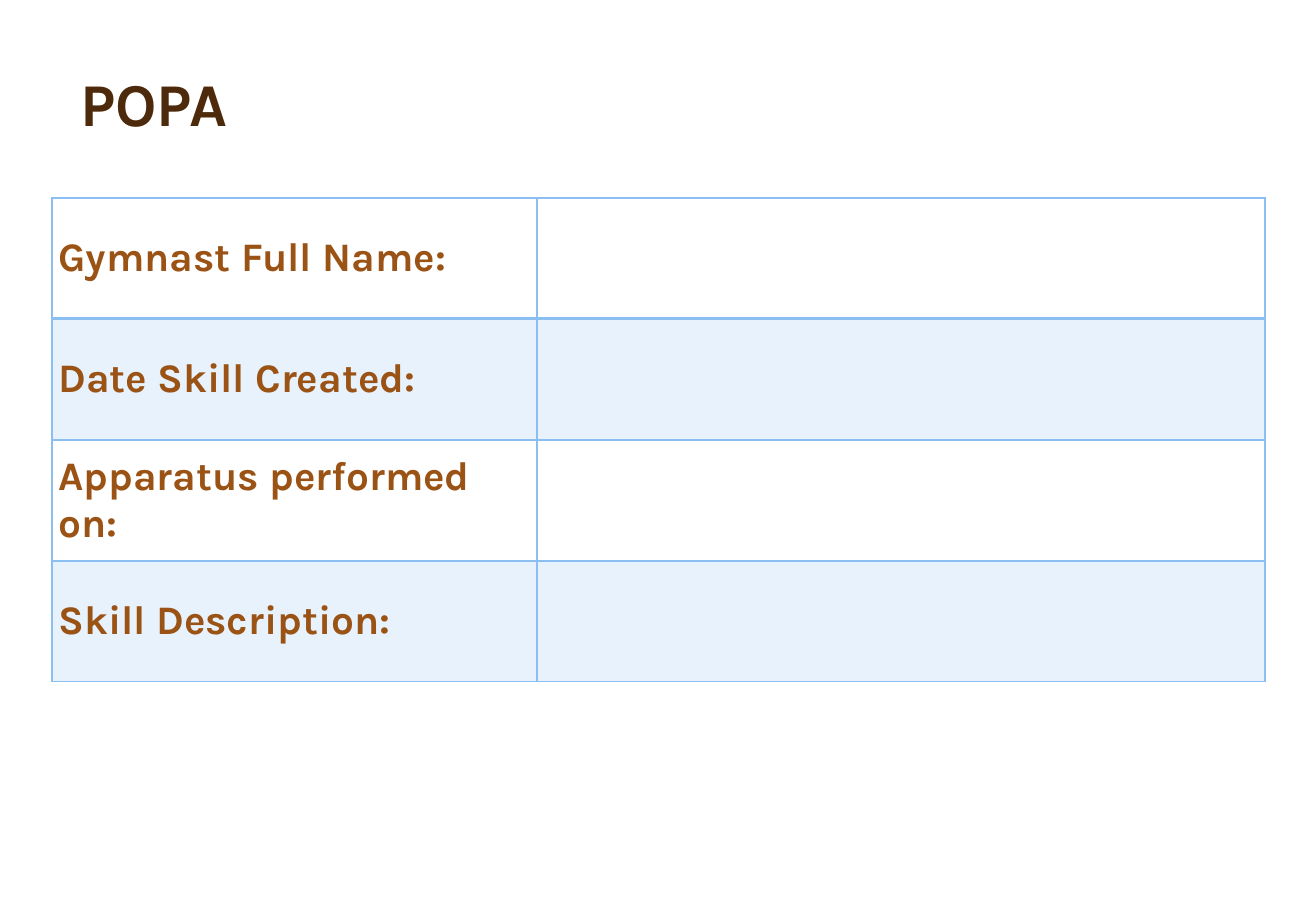
import pptx
import pptx.dml.color
import pptx.enum.text
import pptx.oxml
import pptx.oxml.ns
import pptx.util

Cm, Pt = pptx.util.Cm, pptx.util.Pt
ANCHOR = pptx.enum.text.MSO_ANCHOR
FONT = "Karla"
BLUE = "8BBEF1"
LABELS = ["Gymnast Full Name:", "Date Skill Created:",
          "Apparatus performed on:", "Skill Description:"]


def rgb(color):
    """Return the colour for a hex string."""
    return pptx.dml.color.RGBColor.from_string(color)


def style(p, size, color):
    """Set the bold font of a paragraph."""
    p.font.name = FONT
    p.font.size = Pt(size)
    p.font.bold = True
    p.font.color.rgb = rgb(color)


def add_title(s, text, left, top, width, height):
    """Place and format the slide title."""
    sp = s.shapes.title
    sp.left, sp.top, sp.width, sp.height = left, top, width, height
    tf = sp.text_frame
    tf.text = text
    tf.word_wrap = True
    tf.vertical_anchor = ANCHOR.BOTTOM
    p = tf.paragraphs[0]
    p.alignment = pptx.enum.text.PP_ALIGN.LEFT
    p.line_spacing = 0.9
    style(p, 36, "4D2A0B")


def set_borders(cell, widths):
    """Draw the left, right, top and bottom borders of a cell."""
    tcPr = cell._tc.get_or_add_tcPr()
    for side, width in zip("LRTB", widths):
        tcPr.append(pptx.oxml.parse_xml(
            f'<a:ln{side} {pptx.oxml.ns.nsdecls("a")} w="{Pt(width)}">'
            f'<a:solidFill><a:srgbClr val="{BLUE}"/></a:solidFill></a:ln{side}>'))


def set_fill(cell, shaded):
    """Give a cell a light tint or no fill."""
    if not shaded:
        cell.fill.background()
        return
    cell.fill.solid()
    cell.fill.fore_color.rgb = rgb(BLUE)
    color = cell._tc.tcPr.find(".//" + pptx.oxml.ns.qn("a:solidFill") + "[last()]/"
                               + pptx.oxml.ns.qn("a:srgbClr"))
    for fill in cell._tc.tcPr.findall(pptx.oxml.ns.qn("a:solidFill")):
        color = fill[0]
    color.append(pptx.oxml.parse_xml(
        f'<a:alpha {pptx.oxml.ns.nsdecls("a")} val="20000"/>'))


def add_form(s, labels, left, top, width, height):
    """Add a form table with labels on the left and blanks on the right."""
    table = s.shapes.add_table(len(labels), 2, left, top, width, height).table
    table.columns[0].width = int(width * 0.4)
    table.columns[1].width = int(width * 0.6)
    for i, label in enumerate(labels):
        table.rows[i].height = int(height / len(labels))
        for cell in table.rows[i].cells:
            set_borders(cell, (1, 1, 2 if i == 1 else 1, 2 if i == 0 else 1))
            set_fill(cell, i % 2 == 1)
        cell = table.cell(i, 0)
        cell.margin_left = cell.margin_right = Cm(0.13)
        cell.margin_top = cell.margin_bottom = Cm(0.13)
        cell.vertical_anchor = ANCHOR.MIDDLE
        cell.text = label
        style(cell.text_frame.paragraphs[0], 24, "9A5315")


def main():
    """Build and save the slide."""
    prs = pptx.Presentation()
    prs.slide_width, prs.slide_height = Cm(27.51), Cm(19.05)
    s = prs.slides.add_slide(prs.slide_layouts[5])
    add_title(s, "POPA", Cm(1.42), Cm(1.17), Cm(22.71), Cm(1.88))
    add_form(s, LABELS, Cm(1.09), Cm(4.14), Cm(25.35), Cm(10.12))
    prs.save("out.pptx")


if __name__ == "__main__":
    main()
